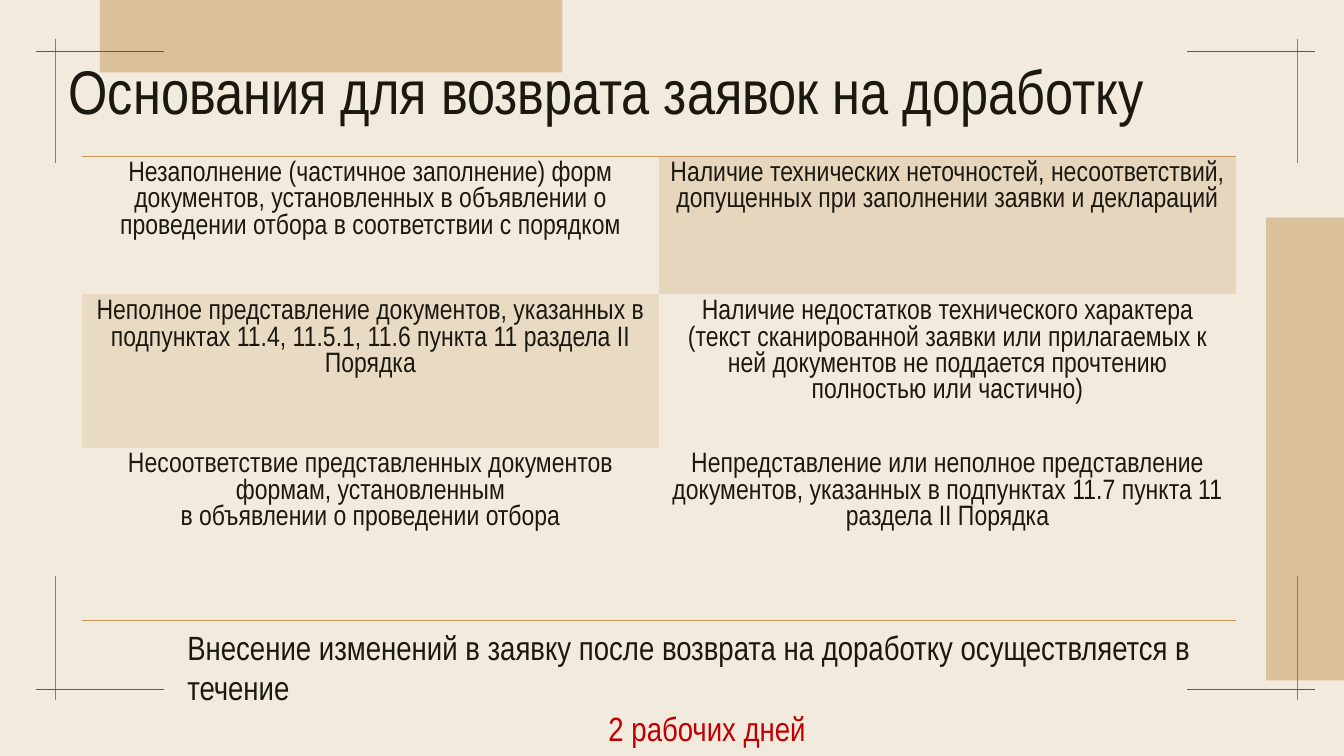
from itertools import product

from lxml.etree import SubElement
from pptx import Presentation
from pptx.dml.color import RGBColor
from pptx.enum.shapes import MSO_CONNECTOR, MSO_SHAPE
from pptx.enum.text import MSO_ANCHOR, PP_ALIGN
from pptx.oxml.ns import qn
from pptx.util import Pt

FONT = "Arial Narrow"
PAPER, SAND, GOLD, INK, RED = "F3EADE", "DAC19B", "C19859", "1B1810", "C00000"
TITLE = "Основания для возврата заявок на доработку"

# Each cell: paragraphs and fill
REASONS = [
    [(["Незаполнение (частичное заполнение) форм документов, установленных в "
       "объявлении о проведении отбора в соответствии с порядком"], None),
     (["Наличие технических неточностей, несоответствий, допущенных при "
       "заполнении заявки и деклараций"], "E6D6BD")],
    [(["Неполное представление документов, указанных в подпунктах 11.4, 11.5.1, "
       "11.6 пункта 11 раздела II Порядка"], "E9DAC3"),
     (["Наличие недостатков технического характера (текст сканированной заявки "
       "или прилагаемых к ней документов не поддается прочтению полностью или "
       "частично)"], None)],
    [(["Несоответствие представленных документов формам, установленным",
       "в объявлении о проведении отбора"], None),
     (["Непредставление или неполное представление документов, указанных в "
       "подпунктах 11.7 пункта 11 раздела II Порядка"], None)],
]
ROW_HEIGHTS = [98.7, 109.4, 123.8]
RULED_SIDES = [("T", "B"), (), ("B",)]


def colour(value):
    return RGBColor.from_string(value)


def write(para, text, size=20, ink=INK, align=PP_ALIGN.LEFT, spacing=None):
    para.alignment = align
    para.line_spacing = spacing
    span = para.add_run()
    span.text = text
    span.font.name = FONT
    span.font.size = Pt(size)
    span.font.color.rgb = colour(ink)


def add_band(page, left, top, width, height):
    band = page.shapes.add_shape(MSO_SHAPE.RECTANGLE, Pt(left), Pt(top), Pt(width), Pt(height))
    band.shadow.inherit = False
    band.fill.solid()
    band.fill.fore_color.rgb = colour(SAND)
    band.line.fill.background()


def add_line(page, x1, y1, x2, y2, ink):
    line = page.shapes.add_connector(MSO_CONNECTOR.STRAIGHT, Pt(x1), Pt(y1), Pt(x2), Pt(y2))
    line.line.color.rgb = colour(ink)
    line.line.width = Pt(1)
    SubElement(line._element.spPr, qn("a:effectLst"))


def add_corner_marks(page):
    columns = [(39.6, 26, 117.4), (926.6, 848.2, 939.6)]
    rows = [(36.7, 28.1, 116.6), (492.5, 411.1, 499.7)]
    for (x, left, right), (y, top, bottom) in product(columns, rows):
        add_line(page, x, top, x, bottom, "808080")
        add_line(page, left, y, right, y, "595959")


def set_title(page, text):
    box = page.shapes.title
    box.left, box.top, box.width, box.height = Pt(41.8), Pt(36), Pt(828), Pt(63.4)
    box.text_frame.vertical_anchor = MSO_ANCHOR.MIDDLE
    write(box.text_frame.paragraphs[0], text, size=44, spacing=0.9)
    page.shapes._spTree.append(box._element)  # in front of the bands


def set_borders(cell, ruled):
    properties = cell._tc.get_or_add_tcPr()
    for side in "LRTB":
        border = SubElement(properties, qn(f"a:ln{side}"), w=str(Pt(1)))
        if side in ruled:
            fill = SubElement(border, qn("a:solidFill"))
            SubElement(fill, qn("a:srgbClr"), val=GOLD)
        else:
            SubElement(border, qn("a:noFill"))


def fill_cell(cell, texts, fill, ruled):
    set_borders(cell, ruled)
    if fill:
        cell.fill.solid()
        cell.fill.fore_color.rgb = colour(fill)
    else:
        cell.fill.background()
    frame = cell.text_frame
    for index, text in enumerate(texts):
        para = frame.add_paragraph() if index else frame.paragraphs[0]
        write(para, text, align=PP_ALIGN.CENTER, spacing=Pt(18.8))


def add_reasons(page):
    table = page.shapes.add_table(3, 2, Pt(58.5), Pt(111.6), Pt(824.4), Pt(sum(ROW_HEIGHTS))).table
    table.first_row = table.horz_banding = False
    for row, height, reasons, ruled in zip(table.rows, ROW_HEIGHTS, REASONS, RULED_SIDES):
        row.height = Pt(height)
        for cell, (texts, fill) in zip(row.cells, reasons):
            fill_cell(cell, texts, fill, ruled)


def add_deadline(page):
    box = page.shapes.add_textbox(Pt(126.7), Pt(444.2), Pt(756.7), Pt(65.5))
    frame = box.text_frame
    frame.word_wrap = True
    write(frame.paragraphs[0], "Внесение изменений в заявку после возврата на "
          "доработку осуществляется в течение", size=24)
    write(frame.add_paragraph(), "2 рабочих дней", size=24, ink=RED, align=PP_ALIGN.CENTER)


def main():
    deck = Presentation()
    deck.slide_width, deck.slide_height = Pt(960), Pt(540)
    page = deck.slides.add_slide(deck.slide_layouts.get_by_name("Title Only"))
    page.background.fill.solid()
    page.background.fill.fore_color.rgb = colour(PAPER)

    # Decoration
    add_band(page, 904.3, 155.5, 55.7, 330.5)
    add_band(page, 71.3, 0, 330.5, 51.8)
    add_corner_marks(page)

    # Content
    set_title(page, TITLE)
    add_reasons(page)
    add_deadline(page)
    deck.save("out.pptx")


if __name__ == "__main__":
    main()
